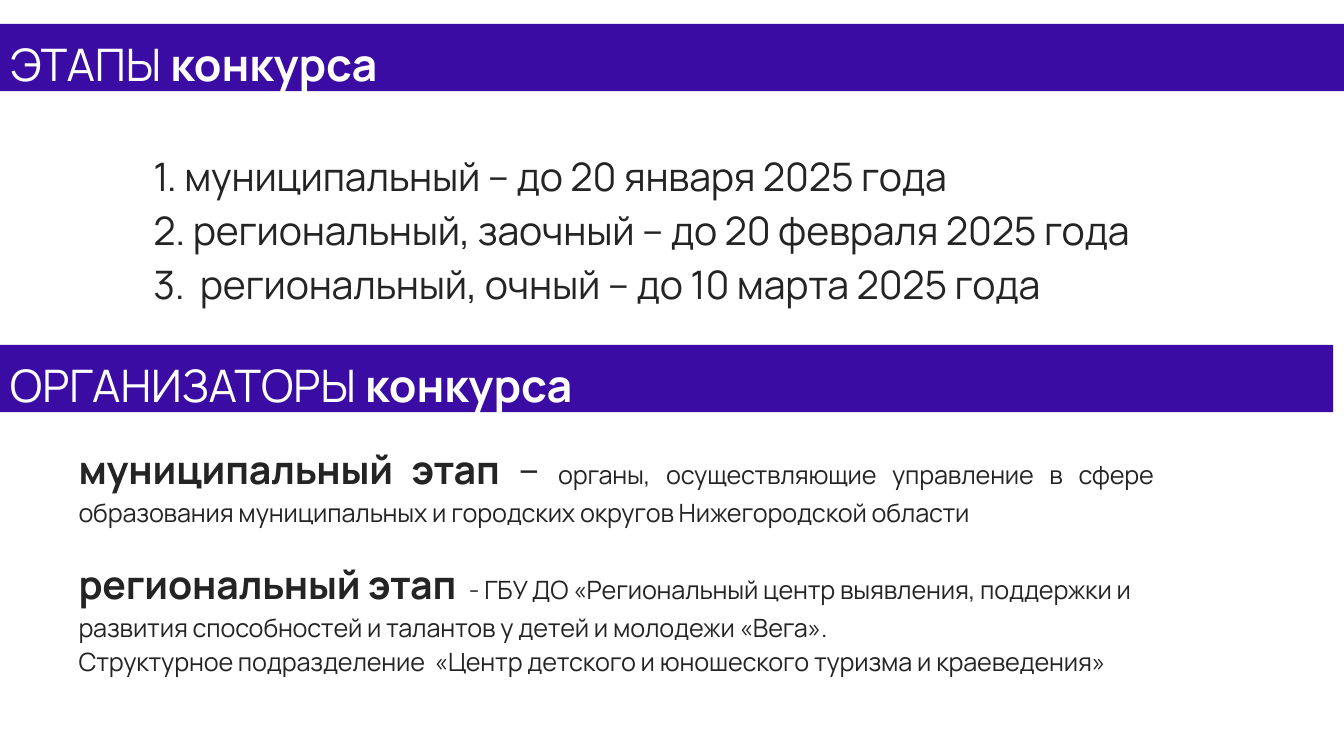
from pptx import Presentation
from pptx.dml.color import RGBColor
from pptx.enum.shapes import MSO_SHAPE
from pptx.enum.text import MSO_ANCHOR, MSO_AUTO_SIZE, PP_ALIGN
from pptx.util import Cm, Pt

VIOLET = RGBColor(0x3A, 0x0C, 0xA3)
WHITE = RGBColor(0xFF, 0xFF, 0xFF)
DARK = RGBColor(0x24, 0x24, 0x24)
FONT = "Manrope"
RECT = MSO_SHAPE.RECTANGLE
TOP = MSO_ANCHOR.TOP
NO_FIT = MSO_AUTO_SIZE.NONE
JUSTIFY, LEFT = PP_ALIGN.JUSTIFY, PP_ALIGN.LEFT


def place(sp, left, top, width, height):
    sp.left, sp.top, sp.width, sp.height = Cm(left), Cm(top), Cm(width), Cm(height)
    tf = sp.text_frame
    tf.word_wrap = True
    tf.auto_size = NO_FIT
    tf.vertical_anchor = TOP
    return tf


def write(tf, paragraphs, color, align=JUSTIFY, indent=0, spacing=0):
    for i, runs in enumerate(paragraphs):
        p = tf.paragraphs[0] if i == 0 else tf.add_paragraph()
        p.alignment = align
        p.line_spacing = 1.15
        p.space_before = Pt(0)
        pPr = p._p.get_or_add_pPr()
        pPr.set("marL", "0")
        pPr.set("indent", str(Cm(indent)))
        pPr.insert_element_before(
            pPr.makeelement("{http://schemas.openxmlformats.org/drawingml/2006/main}buNone"),
            "a:tabLst", "a:defRPr", "a:extLst")
        p.font.name = FONT
        p.font.color.rgb = color
        for text, size, bold in runs:
            r = p.add_run()
            r.text = text
            r.font.size = Pt(size)
            r.font.bold = bold
            if spacing:
                r._r.get_or_add_rPr().set("spc", str(spacing))


prs = Presentation()
prs.slide_width, prs.slide_height = Cm(33.87), Cm(19.05)
s = prs.slides.add_slide(prs.slide_layouts[1])
title, stages = s.placeholders

organizers = s.shapes.add_shape(RECT, 0, 0, Cm(1), Cm(1))
organizers.shadow.inherit = False
organizers.line.fill.background()

bands = [
    (title, "ЭТАПЫ", 0.6, 33.87),
    (organizers, "ОРГАНИЗАТОРЫ", 8.69, 33.6),
]
for sp, word, top, width in bands:
    sp.fill.solid()
    sp.fill.fore_color.rgb = VIOLET
    tf = place(sp, 0, top, width, 1.7)
    write(tf, [[(word, 32, False), (" конкурса", 32, True)]], WHITE)

dates = [
    "1. муниципальный – до 20 января 2025 года",
    "2. региональный, заочный – до 20 февраля 2025 года",
    "3.  региональный, очный – до 10 марта 2025 года",
]
tf = place(stages, 2.34, 3.53, 27.6, 4.3)
write(tf, [[(date, 28, False)] for date in dates], DARK, indent=1.27, spacing=-10)

municipal = [[
    ("муниципальный этап", 28, True),
    (" – ", 28, False),
    ("органы, осуществляющие управление в сфере образования "
     "муниципальных и городских округов Нижегородской области", 18, False),
]]
regional = [
    [
        ("региональный этап ", 28, True),
        (" - ГБУ ДО «Региональный центр выявления, поддержки и развития "
         "способностей и талантов у детей и молодежи «Вега».", 18, False),
    ],
    [("Структурное подразделение  «Центр детского и юношеского туризма "
      "и краеведения»", 18, False)],
]
for paragraphs, top, width, height, align in [
    (municipal, 10.92, 27.6, 2.45, JUSTIFY),
    (regional, 13.82, 29.6, 3.32, LEFT),
]:
    sp = s.shapes.add_textbox(0, 0, Cm(1), Cm(1))
    tf = place(sp, 1.73, top, width, height)
    write(tf, paragraphs, DARK, align, spacing=-10)

prs.save("out.pptx")
